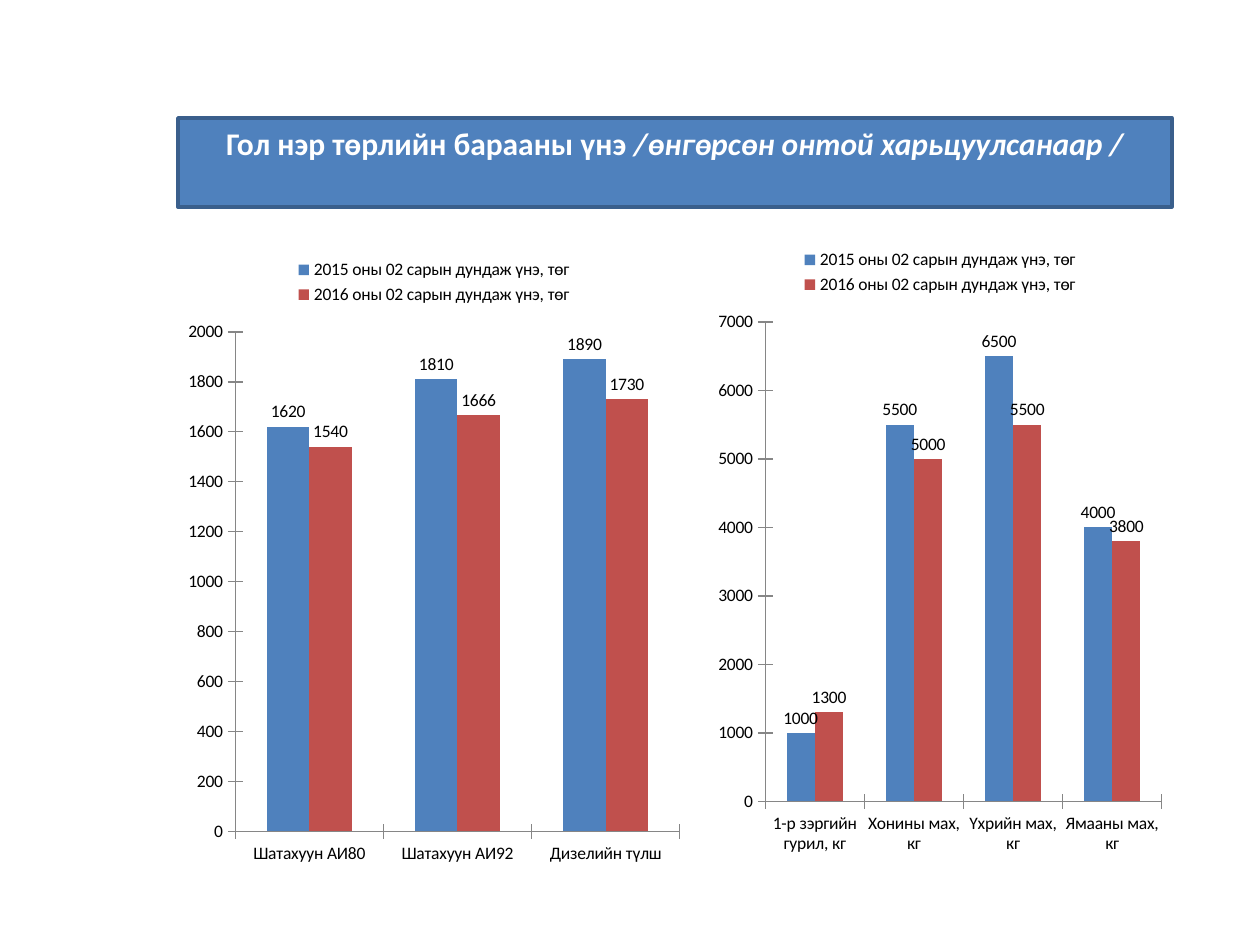
import pptx
import pptx.chart.data
import pptx.dml.color
import pptx.enum.chart
import pptx.enum.text
import pptx.enum.shapes
import pptx.util

EMU_PER_PX = 914400 / 126
BLUE, RED, NAVY = "4F81BD", "C0504D", "3A5F8C"
WHITE, BLACK, GRAY = "FFFFFF", "000000", "868686"


def px(n):
    return pptx.util.Emu(round(n * EMU_PER_PX))


def rgb(value):
    return pptx.dml.color.RGBColor.from_string(value)


def set_font(font, size, color, bold=False, italic=False):
    font.name = "Calibri"
    font.size = pptx.util.Pt(size)
    font.color.rgb = rgb(color)
    font.bold = bold
    font.italic = italic


def add_text(p, text, **style):
    r = p.add_run()
    r.text = text
    set_font(r.font, **style)


class PriceSlide:
    """The current slide and the style shared by its elements."""

    series_colors = (BLUE, RED)
    label_size = 10
    title_size = 18

    def __init__(self, prs):
        self.s = prs.slides.add_slide(prs.slide_layouts[6])

    def banner(self, x, y, w, h, parts):
        """Title box; parts holds (text, italic) pairs."""
        sp = self.s.shapes.add_shape(
            pptx.enum.shapes.MSO_SHAPE.RECTANGLE, px(x), px(y), px(w), px(h))
        sp.shadow.inherit = False
        sp.fill.solid()
        sp.fill.fore_color.rgb = rgb(BLUE)
        sp.line.color.rgb = rgb(NAVY)
        sp.line.width = pptx.util.Pt(2)
        tf = sp.text_frame
        tf.word_wrap = True
        tf.vertical_anchor = pptx.enum.text.MSO_ANCHOR.TOP
        p = tf.paragraphs[0]
        p.alignment = pptx.enum.text.PP_ALIGN.CENTER
        for text, italic in parts:
            add_text(p, text, size=self.title_size, color=WHITE,
                     bold=True, italic=italic)

    def column_chart(self, x, y, w, h, categories, series, top, step):
        """Clustered columns with a value axis from 0 to top."""
        data = pptx.chart.data.CategoryChartData(number_format="General")
        data.categories = categories
        for name, values in series.items():
            data.add_series(name, values)
        chart = self.s.shapes.add_chart(
            pptx.enum.chart.XL_CHART_TYPE.COLUMN_CLUSTERED,
            px(x), px(y), px(w), px(h), data).chart
        set_font(chart.font, self.label_size, BLACK)
        chart.has_title = False
        chart.has_legend = True
        chart.legend.position = pptx.enum.chart.XL_LEGEND_POSITION.TOP
        chart.legend.include_in_layout = False

        for axis in (chart.category_axis, chart.value_axis):
            axis.has_major_gridlines = False
            axis.major_tick_mark = pptx.enum.chart.XL_TICK_MARK.CROSS
            axis.format.line.color.rgb = rgb(GRAY)
        chart.value_axis.minimum_scale = 0
        chart.value_axis.maximum_scale = top
        chart.value_axis.major_unit = step

        plot = chart.plots[0]
        plot.vary_by_categories = False
        plot.gap_width = 150
        plot.overlap = 0
        for ser, color in zip(plot.series, self.series_colors):
            ser.format.fill.solid()
            ser.format.fill.fore_color.rgb = rgb(color)
            ser.data_labels.show_value = True
            ser.data_labels.position = (
                pptx.enum.chart.XL_LABEL_POSITION.OUTSIDE_END)


def main():
    prs = pptx.Presentation()
    prs.slide_width, prs.slide_height = px(1260), px(945)
    slide = PriceSlide(prs)
    slide.banner(178, 118, 994, 89, [
        ("Гол нэр төрлийн барааны үнэ ", False),
        ("/өнгөрсөн онтой харьцуулсанаар /", True),
    ])

    last_year = "2015 оны 02 сарын дундаж үнэ, төг"
    this_year = "2016 оны 02 сарын дундаж үнэ, төг"
    slide.column_chart(
        709, 236, 462, 630,
        ["1-р зэргийн гурил, кг", "Хонины мах, кг",
         "Үхрийн мах, кг", "Ямааны мах, кг"],
        {last_year: (1000, 5500, 6500, 4000),
         this_year: (1300, 5000, 5500, 3800)},
        top=7000, step=1000)
    slide.column_chart(
        178, 246, 512, 630,
        ["Шатахуун АИ80", "Шатахуун АИ92", "Дизелийн түлш"],
        {last_year: (1620, 1810, 1890),
         this_year: (1540, 1666, 1730)},
        top=2000, step=200)
    prs.save("out.pptx")


if __name__ == "__main__":
    main()
